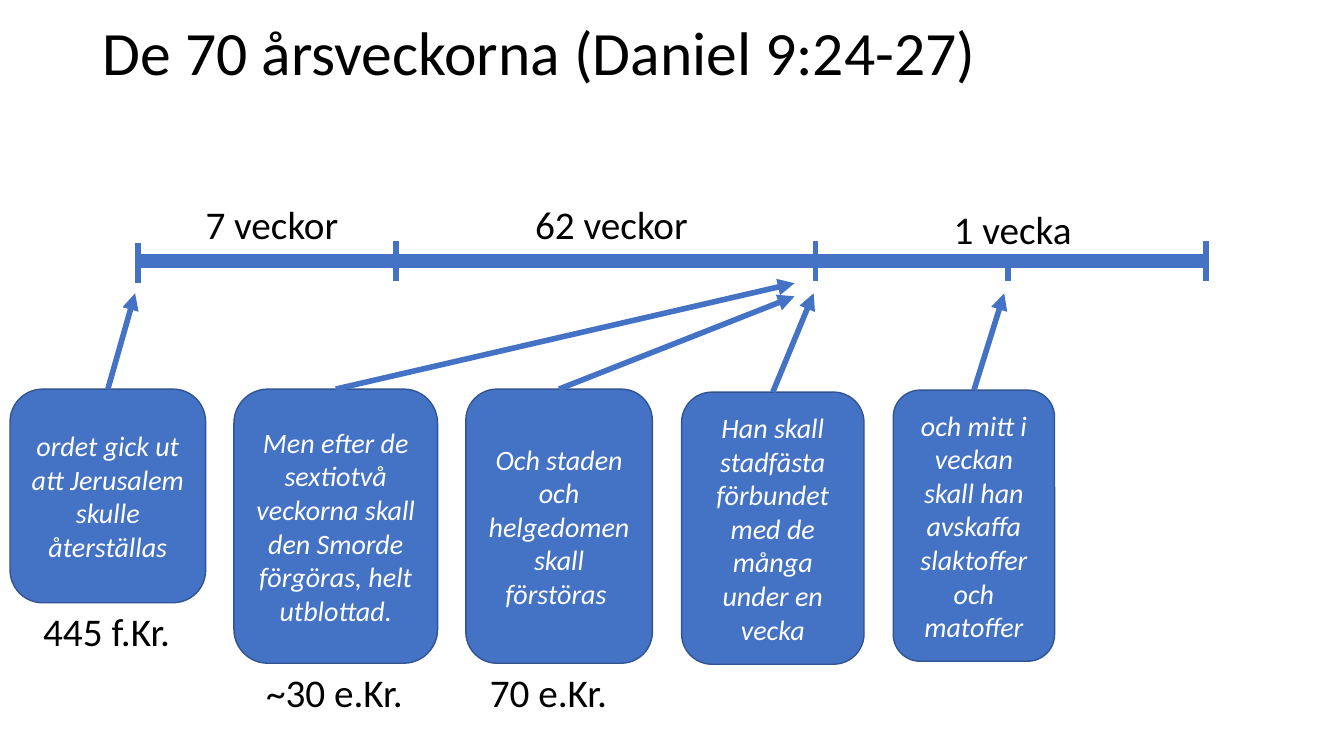
import pptx
import pptx.dml.color
import pptx.enum.shapes
import pptx.enum.text
import pptx.oxml
import pptx.oxml.ns
import pptx.util

Inches, Pt = pptx.util.Inches, pptx.util.Pt
ALIGN = pptx.enum.text.PP_ALIGN
MIDDLE = pptx.enum.text.MSO_ANCHOR.MIDDLE
COLORS = {"blue": "4472C4", "edge": "325491", "text": "000000", "white": "FFFFFF"}


def color(name):
    return pptx.dml.color.RGBColor.from_string(COLORS[name])


def write(frame, text, size, tint, align, italic=None):
    frame.text = text
    para = frame.paragraphs[0]
    para.alignment = align
    font = para.runs[0].font
    font.name, font.size, font.italic = "Calibri", Pt(size), italic
    font.color.rgb = color(tint)


def add_label(slide, text, x, y, w):
    box = slide.shapes.add_textbox(Inches(x), Inches(y), Inches(w), Inches(0.57))
    box.text_frame.word_wrap = False
    write(box.text_frame, text, 28, "text", ALIGN.LEFT)


def add_line(slide, start, end, width=4, arrow=False):
    line = slide.shapes.add_connector(
        pptx.enum.shapes.MSO_CONNECTOR.STRAIGHT, *map(Inches, start + end))
    line.line.color.rgb = color("blue")
    line.line.width = Pt(width)
    props = line._element.spPr
    if arrow:
        tail = pptx.oxml.parse_xml(
            '<a:tailEnd %s type="triangle"/>' % pptx.oxml.ns.nsdecls("a"))
        line.line._get_or_add_ln().append(tail)
    props.append(pptx.oxml.parse_xml("<a:effectLst %s/>" % pptx.oxml.ns.nsdecls("a")))
    return line


def add_title(slide, x, y, w, h):
    title = slide.shapes.title
    title.left, title.top, title.width, title.height = map(Inches, (x, y, w, h))
    frame = title.text_frame
    write(frame, "De 70 årsveckorna (Daniel 9:24-27)", 44, "text", ALIGN.LEFT)
    frame.vertical_anchor = MIDDLE
    frame.paragraphs[0].line_spacing = 0.9


def add_axis(slide, x, y, w):
    add_line(slide, (x, y), (x + w, y), 10)
    # Ticks: offset along the axis, reach above and below it
    ticks = [(0, 0.18, 0.22), (2.56, 0.2, 0.2), (6.72, 0.2, 0.2),
             (8.63, 0, 0.2), (w, 0.2, 0.2)]
    for dx, up, down in ticks:
        add_line(slide, (x + dx, y - up), (x + dx, y + down))
    # Names of the periods
    spans = [("7 veckor", 0.57, 0.65, 1.53), ("62 veckor", 3.84, 0.65, 1.73),
             ("1 vecka", 7.99, 0.6, 1.39)]
    for text, dx, up, width in spans:
        add_label(slide, text, x + dx, y - up, width)


def add_event(slide, text, x, y, w, h, tip, date=None):
    card = slide.shapes.add_shape(
        pptx.enum.shapes.MSO_SHAPE.ROUNDED_RECTANGLE, *map(Inches, (x, y, w, h)))
    card.shadow.inherit = False
    card.fill.solid()
    card.fill.fore_color.rgb = color("blue")
    card.line.color.rgb = color("edge")
    card.line.width = Pt(1)
    card.text_frame.word_wrap = True
    card.text_frame.vertical_anchor = MIDDLE
    write(card.text_frame, text, 20, "white", ALIGN.CENTER, True)
    # Arrow from the card up to the axis
    arrow = add_line(slide, (x + w / 2, y), tip, arrow=True)
    arrow.begin_connect(card, 0)
    # Year below the card
    if date:
        year, dx, width = date
        add_label(slide, year, x + dx, y + h, width)


def main():
    deck = pptx.Presentation()
    deck.slide_width, deck.slide_height = Inches(13.33), Inches(7.5)
    slide = deck.slides.add_slide(deck.slide_layouts[5])
    add_title(slide, 0.92, 0.05, 11.5, 1.01)
    add_axis(slide, 1.37, 2.59, 10.59)
    events = [
        ("ordet gick ut att Jerusalem skulle återställas",
         0.1, 3.86, 1.94, 2.12, (1.34, 2.91), ("445 f.Kr.", 0.23, 1.48)),
        ("Men efter de sextiotvå veckorna skall den Smorde förgöras, helt utblottad.",
         2.32, 3.86, 2.02, 2.72, (7.88, 2.81), ("~30 e.Kr.", 0.22, 1.58)),
        ("Och staden och helgedomen skall förstöras ",
         4.62, 3.86, 1.85, 2.72, (7.88, 2.94), ("70 e.Kr.", 0.14, 1.38)),
        ("Han skall stadfästa förbundet med de många under en vecka",
         6.76, 3.89, 1.81, 2.7, (8.07, 2.91)),
        ("och mitt i veckan skall han avskaffa slaktoffer och matoffer",
         8.86, 3.87, 1.6, 2.69, (9.96, 2.91)),
    ]
    for event in events:
        add_event(slide, *event)
    deck.save("out.pptx")


if __name__ == "__main__":
    main()
